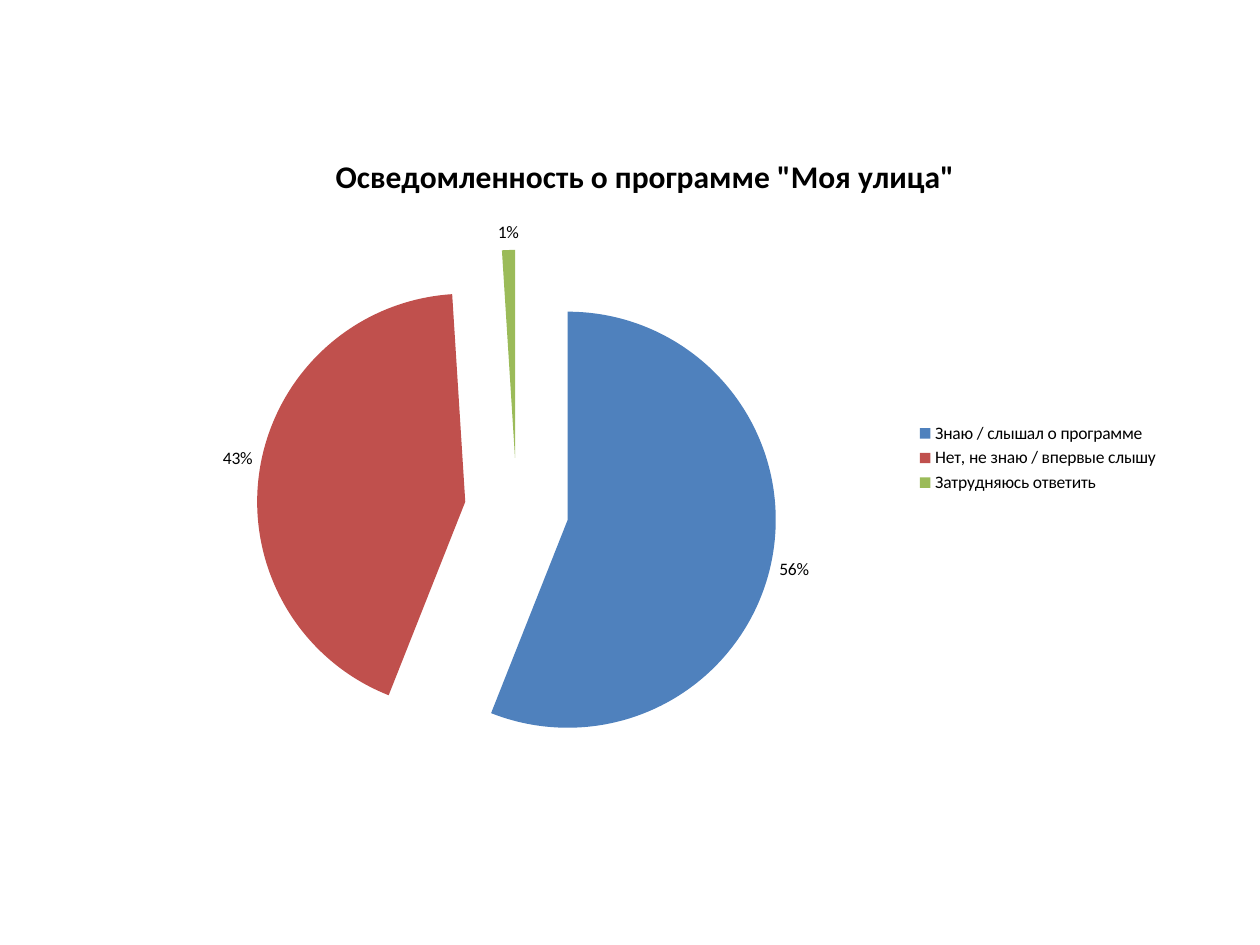
from lxml import etree
from pptx import Presentation
from pptx.chart.data import CategoryChartData
from pptx.dml.color import RGBColor
from pptx.enum.chart import XL_CHART_TYPE, XL_LABEL_POSITION, XL_LEGEND_POSITION
from pptx.oxml.ns import qn
from pptx.util import Inches, Pt

PIE = XL_CHART_TYPE.PIE
OUTSIDE_END = XL_LABEL_POSITION.OUTSIDE_END
RIGHT = XL_LEGEND_POSITION.RIGHT

TITLE = 'Осведомленность о программе "Моя улица"'
# answer, share, colour
ANSWERS = [
    ("Знаю / слышал о программе", 0.56, "4F81BD"),
    ("Нет, не знаю / впервые слышу", 0.43, "C0504D"),
    ("Затрудняюсь ответить", 0.01, "9BBB59"),
]
PERCENT_FORMAT = "###0%"
EXPLOSION = 25


def color(hex_string):
    return RGBColor.from_string(hex_string)


def format_font(font, size, bold=False):
    font.name = "Calibri"
    font.size = Pt(size)
    font.bold = bold
    font.color.rgb = color("000000")


def add_pie(slide, left, top, width, height):
    data = CategoryChartData(number_format=PERCENT_FORMAT)
    data.categories = [answer for answer, _, _ in ANSWERS]
    data.add_series("Series 1", [share for _, share, _ in ANSWERS])
    frame = slide.shapes.add_chart(
        PIE, Inches(left), Inches(top), Inches(width), Inches(height), data
    )
    chart = frame.chart
    format_font(chart.font, 10)
    return chart


def add_title(chart):
    chart.has_title = True
    run = chart.chart_title.text_frame.paragraphs[0].add_run()
    run.text = TITLE
    format_font(run.font, 18, bold=True)
    chart.chart_title.include_in_layout = False


def add_legend(chart):
    chart.has_legend = True
    chart.legend.position = RIGHT
    chart.legend.include_in_layout = False
    format_font(chart.legend.font, 10)


def add_labels(plot):
    plot.has_data_labels = True
    labels = plot.data_labels
    labels.show_value = True
    labels.show_percentage = False
    labels.number_format = PERCENT_FORMAT
    labels.number_format_is_linked = False
    labels.position = OUTSIDE_END
    format_font(labels.font, 10)


def color_slices(series):
    for index, (_, _, slice_color) in enumerate(ANSWERS):
        fill = series.points[index].format.fill
        fill.solid()
        fill.fore_color.rgb = color(slice_color)


def explode_slices(series):
    """Pull all slices away from the centre; the schema wants this before the points."""
    explosion = etree.Element(qn("c:explosion"), val=str(EXPLOSION))
    series._element.find(qn("c:dPt")).addprevious(explosion)


def main():
    presentation = Presentation()
    presentation.slide_width = Inches(10)
    presentation.slide_height = Inches(7.5)
    slide = presentation.slides.add_slide(presentation.slide_layouts[6])

    chart = add_pie(slide, 0.94, 1.02, 8.36, 5.23)
    add_title(chart)
    add_legend(chart)

    plot = chart.plots[0]
    plot.vary_by_categories = True
    add_labels(plot)
    series = plot.series[0]
    color_slices(series)
    explode_slices(series)

    presentation.save("out.pptx")


if __name__ == "__main__":
    main()
